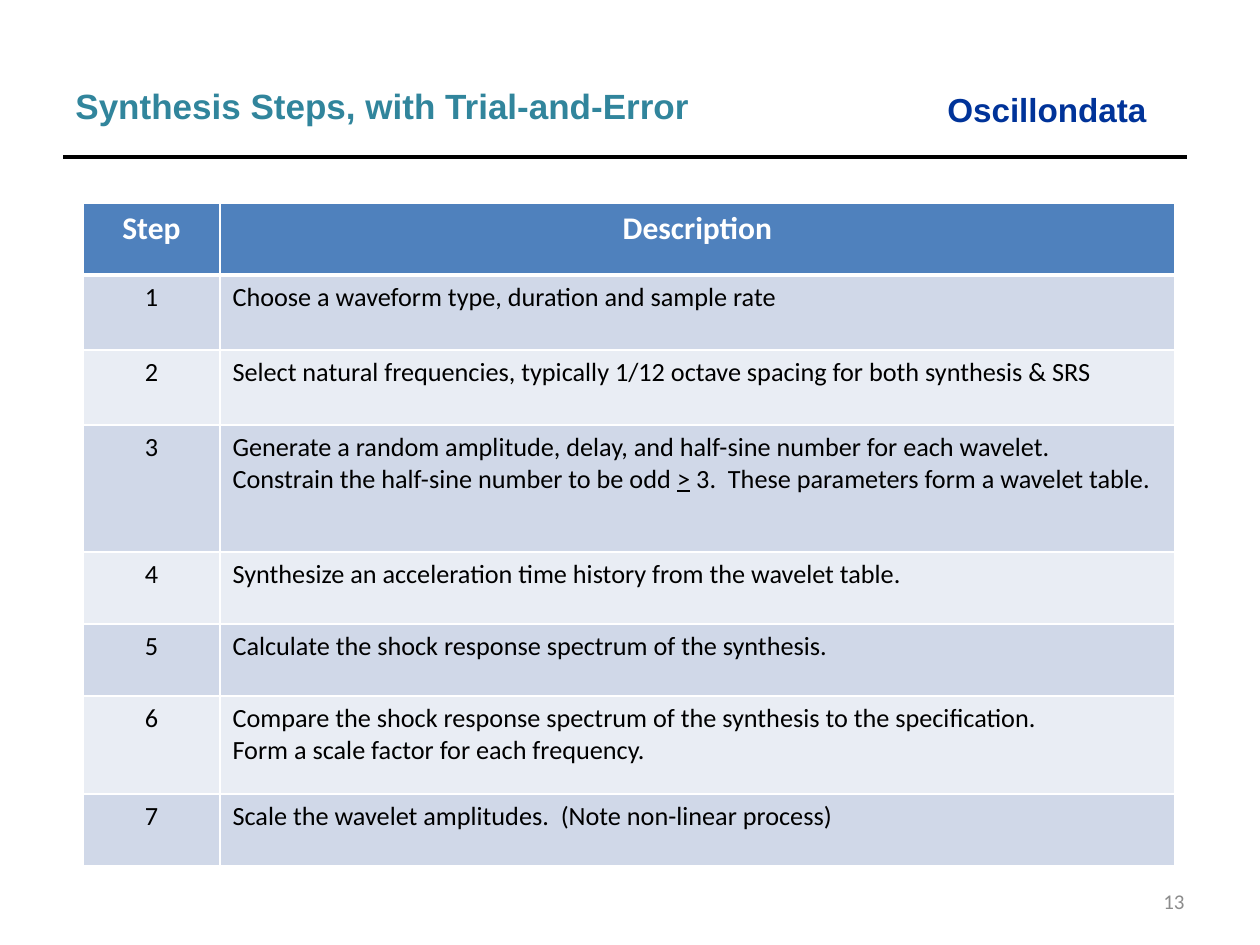
import pptx
import pptx.util
import pptx.dml.color
import pptx.enum.shapes
import pptx.enum.text
import pptx.oxml.ns
import lxml.etree

PX = 914400 / 126
COLORS = {"title": "31859C", "brand": "003399", "rule": "000000", "text": "000000",
          "number": "8C8C8C", "white": "FFFFFF", "header": "4F81BD",
          "odd": "D0D8E8", "even": "E9EDF4"}
ALIGN = pptx.enum.text.PP_ALIGN


def px(n):
    return pptx.util.Emu(round(n * PX))


def style(p, font, size, color, bold=False, align=ALIGN.LEFT):
    p.alignment = align
    for r in p.runs:
        r.font.name = font
        r.font.size = pptx.util.Pt(size)
        r.font.bold = bold
        r.font.color.rgb = pptx.dml.color.RGBColor.from_string(COLORS[color])


prs = pptx.Presentation()
prs.slide_width, prs.slide_height = px(1260), px(945)
slide = prs.slides.add_slide(prs.slide_layouts[6])

# Rule under the title
line = slide.shapes.add_connector(pptx.enum.shapes.MSO_CONNECTOR.STRAIGHT,
                                  px(63), px(157), px(1187), px(157))
line.line.color.rgb = pptx.dml.color.RGBColor.from_string(COLORS["rule"])
line.line.width = pptx.util.Pt(2.25)
lxml.etree.SubElement(line._element.spPr, pptx.oxml.ns.qn("a:effectLst"))

# Brand, slide number and title
labels = [
    ("Oscillondata", (935, 83, 239, 53), "Arial", 19, "brand", True, ALIGN.LEFT),
    ("13", (903, 876, 294, 50), "Calibri", 12, "number", False, ALIGN.RIGHT),
    ("Synthesis Steps, with Trial-and-Error", (63, 78, 725, 55),
     "Arial", 20, "title", True, ALIGN.LEFT),
]
for text, box, font, size, color, bold, align in labels:
    tf = slide.shapes.add_textbox(*map(px, box)).text_frame
    tf.word_wrap = True
    tf.vertical_anchor = pptx.enum.text.MSO_ANCHOR.MIDDLE
    tf.text = text
    style(tf.paragraphs[0], font, size, color, bold, align)

# Table of steps: row height and description
steps = [
    (72, "Description"),
    (75, "Choose a waveform type, duration and sample rate"),
    (75, "Select natural frequencies, typically 1/12 octave spacing for both synthesis & SRS"),
    (127, "Generate a random amplitude, delay, and half-sine number for each wavelet.  "
          "Constrain the half-sine number to be odd > 3.  These parameters form a wavelet table."),
    (72, "Synthesize an acceleration time history from the wavelet table."),
    (72, "Calculate the shock response spectrum of the synthesis."),
    (98, "Compare the shock response spectrum of the synthesis to the specification.\v"
         "Form a scale factor for each frequency."),
    (72, "Scale the wavelet amplitudes.  (Note non-linear process)"),
]
height = sum(h for h, _ in steps)
table = slide.shapes.add_table(len(steps), 2, px(83), px(203), px(1092), px(height)).table
table.columns[0].width, table.columns[1].width = px(137), px(955)

for i, (h, description) in enumerate(steps):
    table.rows[i].height = px(h)
    header = i == 0
    fill = "header" if header else "odd" if i % 2 else "even"
    for j, text in enumerate(("Step" if header else str(i), description)):
        cell = table.cell(i, j)

        # Borders, heavier below the header
        tcPr = cell._tc.get_or_add_tcPr()
        for side in "LRTB":
            heavy = (i, side) in ((0, "B"), (1, "T"))
            ln = lxml.etree.SubElement(tcPr, pptx.oxml.ns.qn("a:ln" + side),
                                       w=str(pptx.util.Pt(3 if heavy else 1)))
            solid = lxml.etree.SubElement(ln, pptx.oxml.ns.qn("a:solidFill"))
            lxml.etree.SubElement(solid, pptx.oxml.ns.qn("a:srgbClr"), val=COLORS["white"])
        cell.fill.solid()
        cell.fill.fore_color.rgb = pptx.dml.color.RGBColor.from_string(COLORS[fill])

        # Text, with the sign underlined to read "at least"
        before, sign, after = text.partition(">")
        p = cell.text_frame.paragraphs[0]
        p.text = before
        if sign:
            r = p.add_run()
            r.text = sign
            r.font.underline = True
            p.add_run().text = after
        style(p, "Calibri", 18 if header else 15, "white" if header else "text", header,
              ALIGN.CENTER if header or j == 0 else ALIGN.LEFT)

prs.save("out.pptx")
